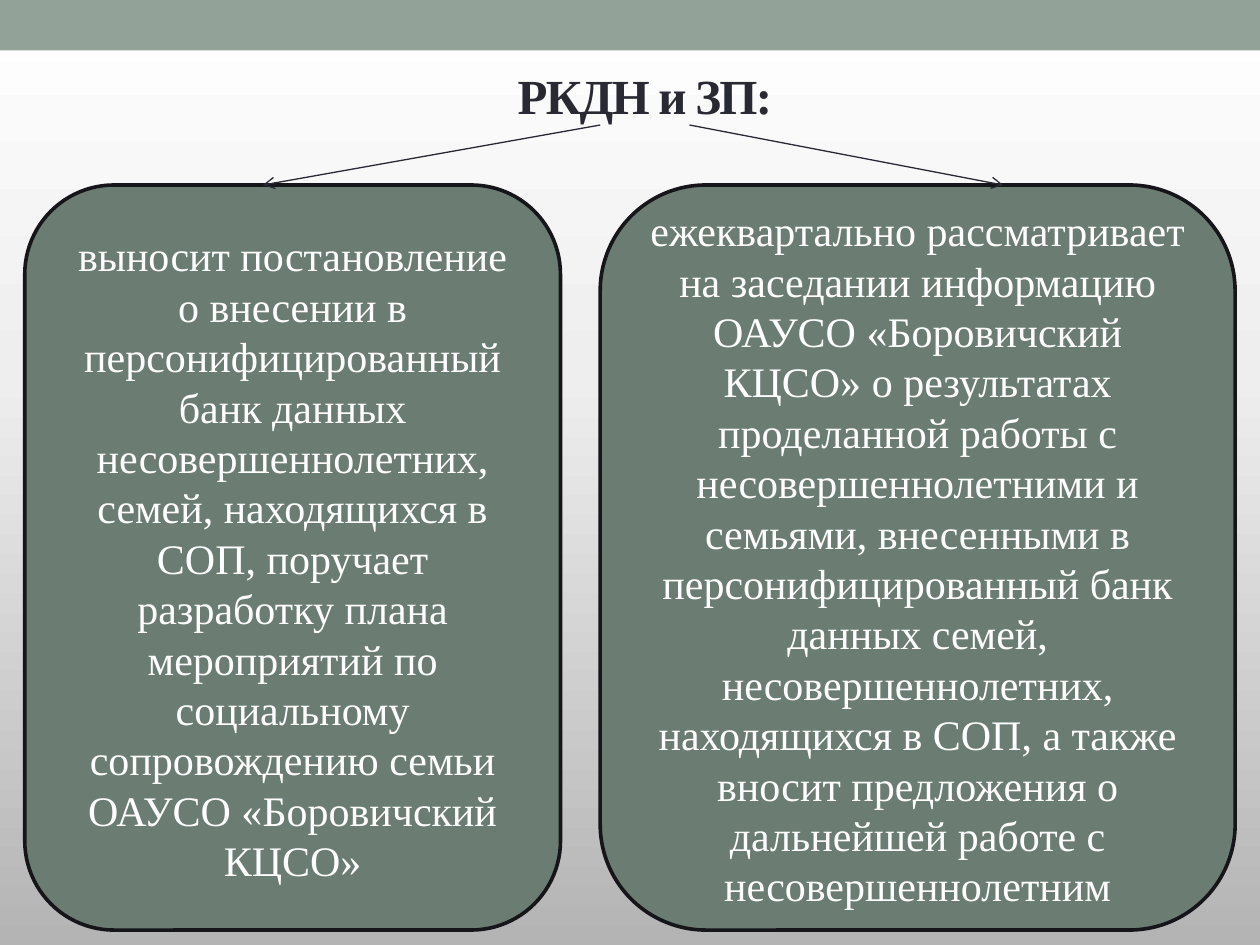
import copy
import pptx
import pptx.util
import pptx.dml.color
import pptx.enum.shapes
import pptx.enum.text
import pptx.oxml
import pptx.oxml.ns
from pptx.util import Cm, Pt

TITLE = "РКДН и ЗП:"
# text, left and width of the box, start and end of its arrow across (cm)
BOXES = [
    ("выносит постановление о внесении в персонифицированный банк данных "
     "несовершеннолетних, семей, находящихся в СОП, поручает разработку плана "
     "мероприятий по социальному сопровождению семьи ОАУСО «Боровичский КЦСО»",
     0.5, 10.8, 12.1, 5.3),
    ("ежеквартально рассматривает на заседании информацию ОАУСО «Боровичский "
     "КЦСО» о результатах проделанной работы с несовершеннолетними и семьями, "
     "внесенными в персонифицированный банк данных семей, несовершеннолетних, "
     "находящихся в СОП, а также вносит предложения о дальнейшей работе с "
     "несовершеннолетним",
     12.1, 12.8, 13.9, 20.22),
]
BANDS = [("white", 0.6, 0.64), ("band", 0, 1.02)]  # colour, top, height
WIDE, HIGH = 25.4, 19.05
TOP, TALL, START = 3.73, 15.02, 2.52

THEME = {
    "font": "Times New Roman", "head": 28, "body": 24, "lead": 28.8,
    "edge": 2.08, "thin": 0.75,
    "white": "FFFFFF", "band": "93A299", "box": "6B7D72",
    "rim": "15151A", "ink": "292934",
    "fade": [(0, "FFFFFF"), (0.4, "EEEEEE"), (1, "B4B4B4")],
}
KINDS = pptx.enum.shapes.MSO_SHAPE
qn = pptx.oxml.ns.qn


def tint(name):
    return pptx.dml.color.RGBColor.from_string(THEME.get(name, name))


def style(para, size, color, bold=False):
    para.alignment = pptx.enum.text.PP_ALIGN.CENTER
    font = para.font
    font.name, font.size, font.bold = THEME["font"], Pt(THEME[size]), bold
    font.color.rgb = tint(color)


def paint(slide):
    """Fill the background with a gradient running down."""
    fill = slide.background.fill
    fill.gradient()
    fill.gradient_angle = 270
    stops = next(slide.element.iter(qn("a:gsLst")))
    stops.append(copy.deepcopy(stops[-1]))
    for stop, (pos, color) in zip(fill.gradient_stops, THEME["fade"]):
        stop.position = pos
        stop.color.rgb = tint(color)


def block(slide, kind, left, top, width, height, color):
    shape = slide.shapes.add_shape(
        kind, Cm(left), Cm(top), Cm(width), Cm(height))
    shape.shadow.inherit = False
    shape.fill.solid()
    shape.fill.fore_color.rgb = tint(color)
    shape.line.fill.background()
    return shape


def panel(slide, text, left, width):
    shape = block(slide, KINDS.ROUNDED_RECTANGLE, left, TOP, width, TALL, "box")
    shape.line.color.rgb = tint("rim")
    shape.line.width = Pt(THEME["edge"])
    frame = shape.text_frame
    frame.text = text
    frame.word_wrap = True
    frame.vertical_anchor = pptx.enum.text.MSO_ANCHOR.MIDDLE
    para = frame.paragraphs[0]
    para.line_spacing = Pt(THEME["lead"])
    style(para, "body", "white")


def arrow(slide, start, end):
    line = slide.shapes.add_connector(
        pptx.enum.shapes.MSO_CONNECTOR.STRAIGHT,
        Cm(start), Cm(START), Cm(end), Cm(TOP))
    line.line.color.rgb = tint("ink")
    line.line.width = Pt(THEME["thin"])
    pptx.oxml.ns.qn
    tip = line.line._get_or_add_ln().makeelement(
        qn("a:tailEnd"), {"type": "arrow"})
    line.element.spPr.find(qn("a:ln")).append(tip)
    line.element.spPr.append(tip.makeelement(qn("a:effectLst"), {}))


def head(slide):
    title = slide.shapes.title
    title.left, title.top = Cm(6.3), Cm(0.92)
    title.width, title.height = Cm(13.4), Cm(2)
    frame = title.text_frame
    frame.text = TITLE
    frame.vertical_anchor = pptx.enum.text.MSO_ANCHOR.MIDDLE
    para = frame.paragraphs[0]
    style(para, "head", "ink", True)
    para.runs[0].font.bold = True
    next(title.element.iter(qn("a:rPr"))).set("spc", "-100")


def main():
    deck = pptx.Presentation()
    deck.slide_width, deck.slide_height = Cm(WIDE), Cm(HIGH)
    slide = deck.slides.add_slide(deck.slide_layouts[5])
    paint(slide)
    for color, top, height in BANDS:
        block(slide, KINDS.RECTANGLE, 0, top, WIDE, height, color)
    for text, left, width, _, _ in BOXES:
        panel(slide, text, left, width)
    # bring the title in front of the bands
    tree = slide.shapes.title.element.getparent()
    tree.append(slide.shapes.title.element)
    head(slide)
    for _, _, _, start, end in BOXES:
        arrow(slide, start, end)
    deck.save("out.pptx")


if __name__ == "__main__":
    main()
